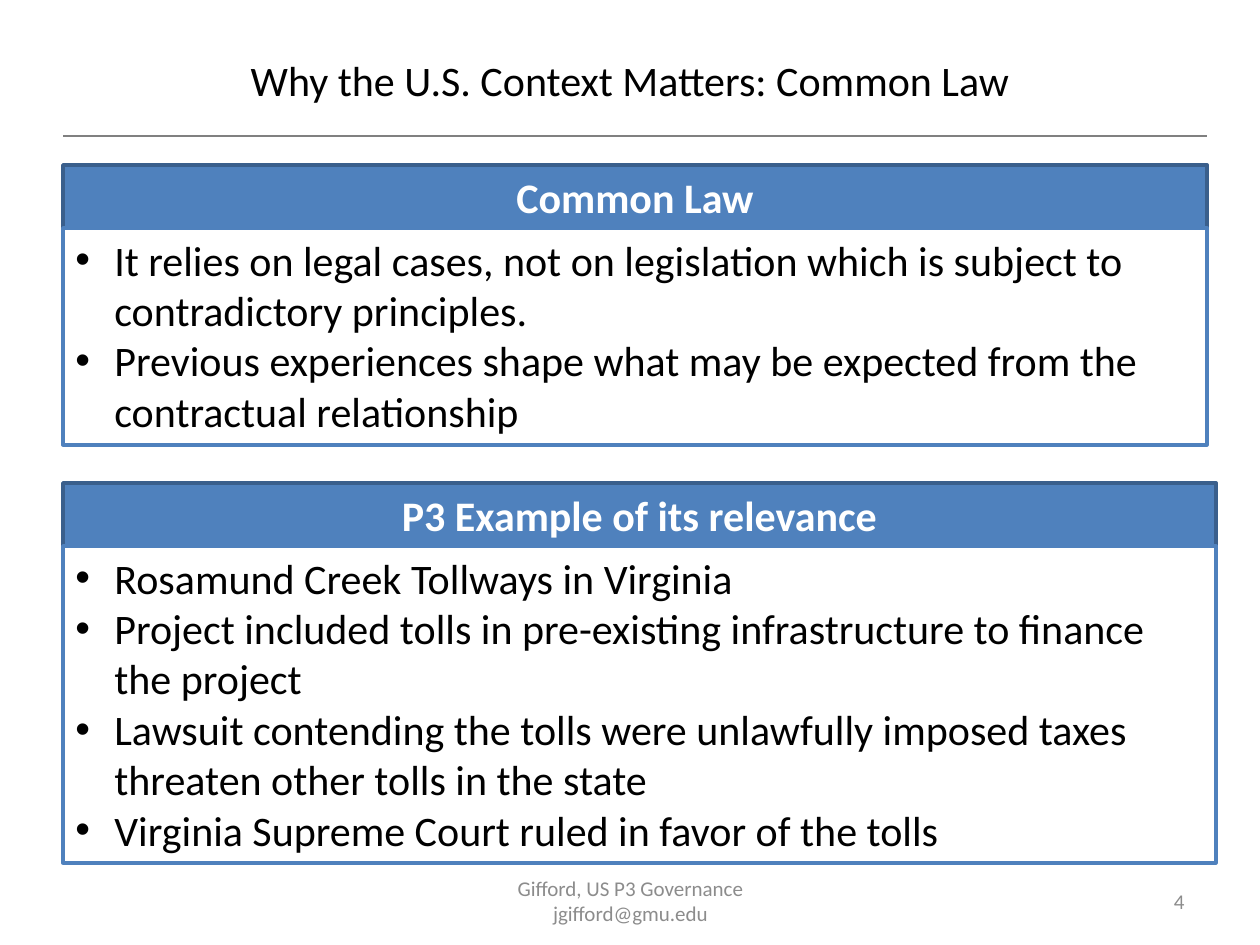
from lxml import etree
from pptx import Presentation
from pptx import util as u
from pptx.dml.color import RGBColor
from pptx.enum import shapes, text
from pptx.oxml.ns import qn

SCALE = 914400 / 126
LEFT = 63
HEADER_HEIGHT = 63
INDENT = 39
BLUE, DARK_BLUE, WHITE, BLACK = "4F81BD", "3A5F8C", "FFFFFF", "000000"
RULE_GRAY, FOOTER_GRAY = "808080", "8C8C8C"

PANELS = [
    ("Common Law", 165, 1144, 217, [
        "It relies on legal cases, not on legislation which is subject to contradictory principles.",
        "Previous experiences shape what may be expected from the contractual relationship",
    ]),
    ("P3 Example of its relevance", 483, 1153, 317, [
        "Rosamund Creek Tollways in Virginia",
        "Project included tolls in pre-existing infrastructure to finance the project",
        "Lawsuit contending the tolls were unlawfully imposed taxes threaten other tolls in the state",
        "Virginia Supreme Court ruled in favor of the tolls",
    ]),
]


def px(length):
    return u.Emu(round(length * SCALE))


def color(value):
    return RGBColor.from_string(value)


def add_span(para, words, size, ink, bold=False):
    span = para.add_run()
    span.text = words
    span.font.name = "Calibri"
    span.font.size = u.Pt(size)
    span.font.bold = bold
    span.font.color.rgb = color(ink)


def add_bullet(para):
    props = para._p.get_or_add_pPr()
    props.set("marL", str(px(INDENT)))
    props.set("indent", str(-px(INDENT)))
    etree.SubElement(props, qn("a:buFont")).set("typeface", "Arial")
    etree.SubElement(props, qn("a:buChar")).set("char", "•")


def set_title(page, words):
    title = page.shapes.title
    title.left, title.top, title.width, title.height = map(px, (LEFT, 16, 1134, 127))
    frame = title.text_frame
    frame.word_wrap = True
    frame.vertical_anchor = text.MSO_ANCHOR.MIDDLE
    para = frame.paragraphs[0]
    para.alignment = text.PP_ALIGN.CENTER
    add_span(para, words, 24, BLACK)


def add_rule(page, left, top, right):
    rule = page.shapes.add_connector(
        shapes.MSO_CONNECTOR.STRAIGHT, px(left), px(top), px(right), px(top))
    rule.line.color.rgb = color(RULE_GRAY)
    rule.line.width = u.Pt(1.25)
    etree.SubElement(rule._element.spPr, qn("a:effectLst"))


def add_block(page, top, width, height, fill, outline):
    """Add an outlined rectangle and return its text frame."""
    block = page.shapes.add_shape(
        shapes.MSO_SHAPE.RECTANGLE, px(LEFT), px(top), px(width), px(height))
    block.shadow.inherit = False
    block.fill.solid()
    block.fill.fore_color.rgb = color(fill)
    block.line.color.rgb = color(outline)
    block.line.width = u.Pt(2)
    frame = block.text_frame
    frame.word_wrap = True
    frame.auto_size = text.MSO_AUTO_SIZE.SHAPE_TO_FIT_TEXT
    frame.vertical_anchor = text.MSO_ANCHOR.TOP
    return frame


def add_panel(page, heading, top, width, body_height, points):
    header = add_block(page, top, width, HEADER_HEIGHT, BLUE, DARK_BLUE)
    para = header.paragraphs[0]
    para.alignment = text.PP_ALIGN.CENTER
    add_span(para, heading, 24, WHITE, bold=True)

    body = add_block(page, top + HEADER_HEIGHT, width, body_height, WHITE, BLUE)
    for index, point in enumerate(points):
        para = body.add_paragraph() if index else body.paragraphs[0]
        para.alignment = text.PP_ALIGN.LEFT
        add_bullet(para)
        add_span(para, point, 24, BLACK)


def add_footer(page, left, width, words, alignment):
    box = page.shapes.add_textbox(px(left), px(876), px(width), px(50))
    frame = box.text_frame
    frame.word_wrap = True
    frame.vertical_anchor = text.MSO_ANCHOR.MIDDLE
    para = frame.paragraphs[0]
    para.alignment = alignment
    add_span(para, words, 12, FOOTER_GRAY)


def main():
    deck = Presentation()
    deck.slide_width, deck.slide_height = px(1260), px(945)
    page = deck.slides.add_slide(deck.slide_layouts[5])
    set_title(page, "Why the U.S. Context Matters: Common Law")
    add_rule(page, LEFT, 136, 1207)
    for panel in PANELS:
        add_panel(page, *panel)
    add_footer(page, 431, 399, "Gifford, US P3 Governance jgifford@gmu.edu",
               text.PP_ALIGN.CENTER)
    add_footer(page, 903, 294, "4", text.PP_ALIGN.RIGHT)
    deck.save("out.pptx")


if __name__ == "__main__":
    main()
